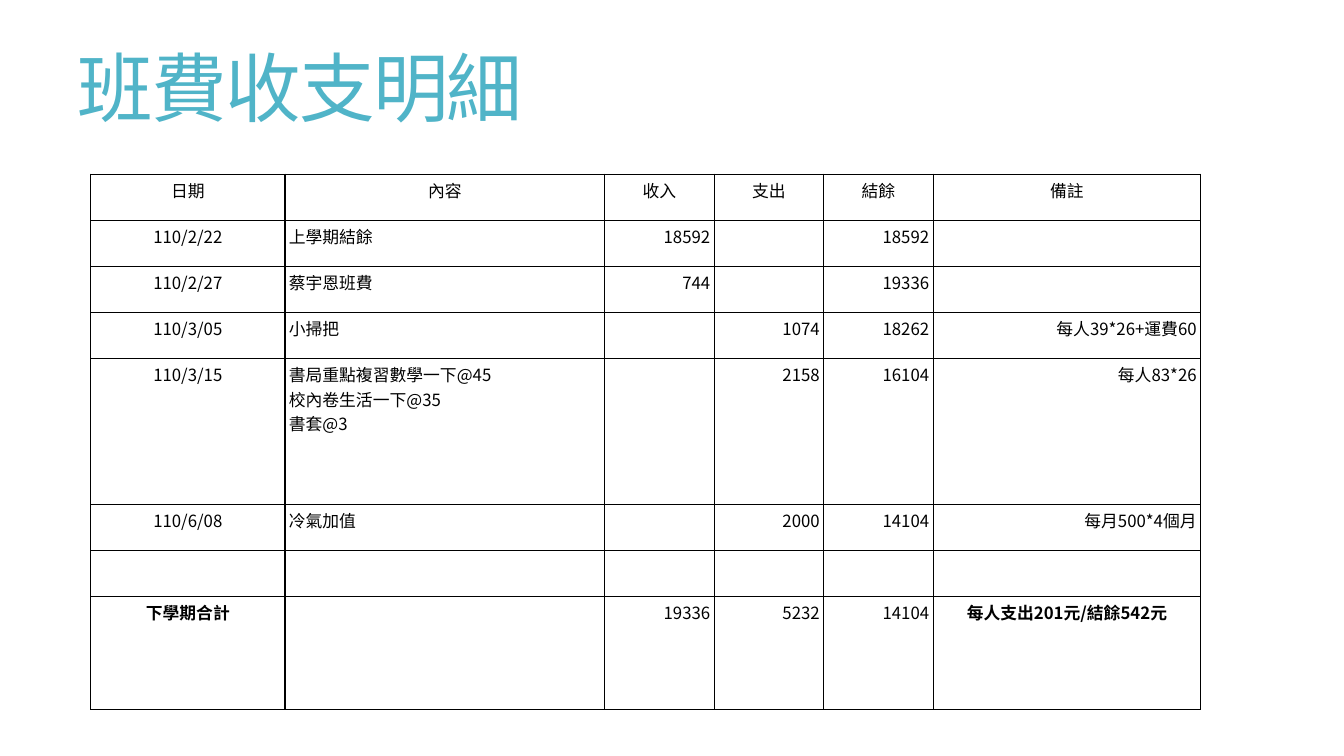
from itertools import groupby

from lxml.etree import SubElement
from pptx import Presentation
from pptx.dml.color import RGBColor
from pptx.enum.text import MSO_ANCHOR, PP_ALIGN
from pptx.oxml.ns import qn
from pptx.util import Cm, Pt

TITLE = "班費收支明細"
HEADER = ("日期", "內容", "收入", "支出", "結餘", "備註")
ENTRIES = [
    ("110/2/22", "上學期結餘", "18592", "", "18592", ""),
    ("110/2/27", "蔡宇恩班費", "744", "", "19336", ""),
    ("110/3/05", "小掃把", "", "1074", "18262", "每人39*26+運費60"),
    ("110/3/15", "書局重點複習數學一下@45\n校內卷生活一下@35\n書套@3",
     "", "2158", "16104", "每人83*26"),
    ("110/6/08", "冷氣加值", "", "2000", "14104", "每月500*4個月"),
    ("", "", "", "", "", ""),
]
TOTAL = ("下學期合計", "", "19336", "5232", "14104", "每人支出201元/結餘542元")
ROWS = [HEADER, *ENTRIES, TOTAL]

COLUMN_WIDTHS = (4.89, 8.06, 2.76, 2.76, 2.76, 6.74)
ROW_HEIGHTS = (1.16, 1.16, 1.16, 1.16, 3.68, 1.16, 1.16, 2.85)
COLUMN_ALIGNMENTS = (PP_ALIGN.CENTER, PP_ALIGN.LEFT) + (PP_ALIGN.RIGHT,) * 4
CELL_MARGIN = Cm(0.1)

TEAL = RGBColor(0x50, 0xB4, 0xC8)
BLACK = RGBColor(0, 0, 0)
SANS = "Noto Sans CJK SC"
SERIF = "Cambria"


def is_chinese(character):
    return character >= "一"


def write_text(frame, text, size=12, color=BLACK, bold=False, chinese_font=SERIF,
               alignment=PP_ALIGN.LEFT, line_spacing=None, tracking=None):
    for index, line in enumerate(text.split("\n")):
        paragraph = frame.add_paragraph() if index else frame.paragraphs[0]
        paragraph.alignment = alignment
        paragraph.line_spacing = line_spacing
        for chinese, characters in groupby(line, is_chinese):
            run = paragraph.add_run()
            run.text = "".join(characters)
            run.font.size = Pt(size)
            run.font.bold = bold
            run.font.color.rgb = color
            run.font.name = chinese_font if chinese else SANS
            properties = run.font._element
            SubElement(properties, qn("a:ea")).set("typeface", SANS)
            if tracking:
                properties.set("spc", str(int(tracking * 100)))


def add_borders(cell):
    properties = cell._tc.get_or_add_tcPr()
    for side in ("a:lnL", "a:lnR", "a:lnT", "a:lnB"):
        line = SubElement(properties, qn(side), w=str(Pt(1)))
        fill = SubElement(line, qn("a:solidFill"))
        SubElement(fill, qn("a:srgbClr"), val=str(BLACK))


def add_title(slide):
    box = slide.shapes.add_textbox(Cm(1.7), Cm(0.76), Cm(30.48), Cm(3.18))
    frame = box.text_frame
    frame.word_wrap = True
    frame.vertical_anchor = MSO_ANCHOR.MIDDLE
    write_text(frame, TITLE, size=54, color=TEAL, chinese_font=SANS,
               line_spacing=0.85, tracking=-1.2)


def add_ledger(slide):
    table = slide.shapes.add_table(
        len(ROWS), len(HEADER), Cm(2.29), Cm(4.39),
        Cm(sum(COLUMN_WIDTHS)), Cm(sum(ROW_HEIGHTS))).table
    table.first_row = False
    table.horz_banding = False
    for column, width in zip(table.columns, COLUMN_WIDTHS):
        column.width = Cm(width)
    for row, height, entry in zip(table.rows, ROW_HEIGHTS, ROWS):
        row.height = Cm(height)
        for index, (cell, text) in enumerate(zip(row.cells, entry)):
            cell.margin_left = cell.margin_right = CELL_MARGIN
            cell.margin_top = cell.margin_bottom = CELL_MARGIN
            add_borders(cell)
            cell.fill.background()
            bold = entry is TOTAL and index in (0, 5)
            centered = entry is HEADER or bold
            write_text(cell.text_frame, text, bold=bold,
                       alignment=PP_ALIGN.CENTER if centered else COLUMN_ALIGNMENTS[index])


def main():
    presentation = Presentation()
    presentation.slide_width = Cm(33.87)
    presentation.slide_height = Cm(19.05)
    slide = presentation.slides.add_slide(presentation.slide_layouts[6])
    add_title(slide)
    add_ledger(slide)
    presentation.save("out.pptx")


if __name__ == "__main__":
    main()
